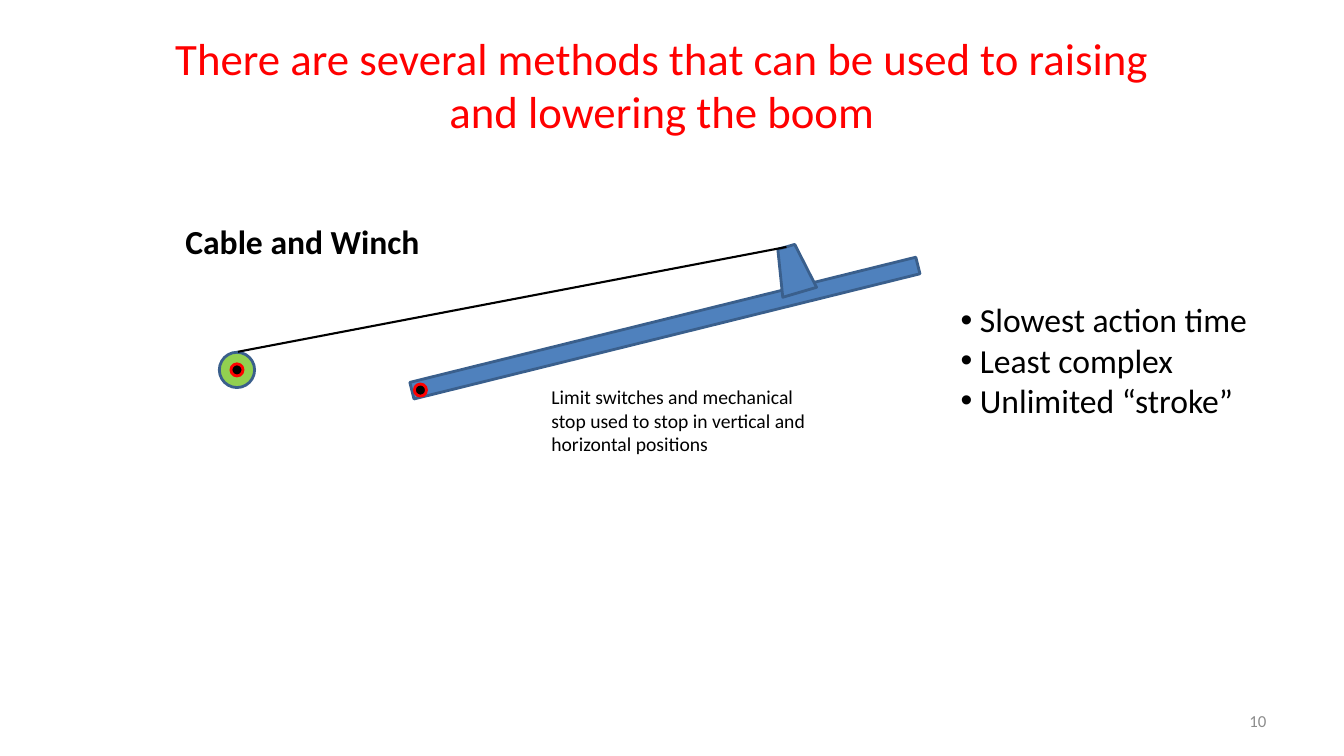
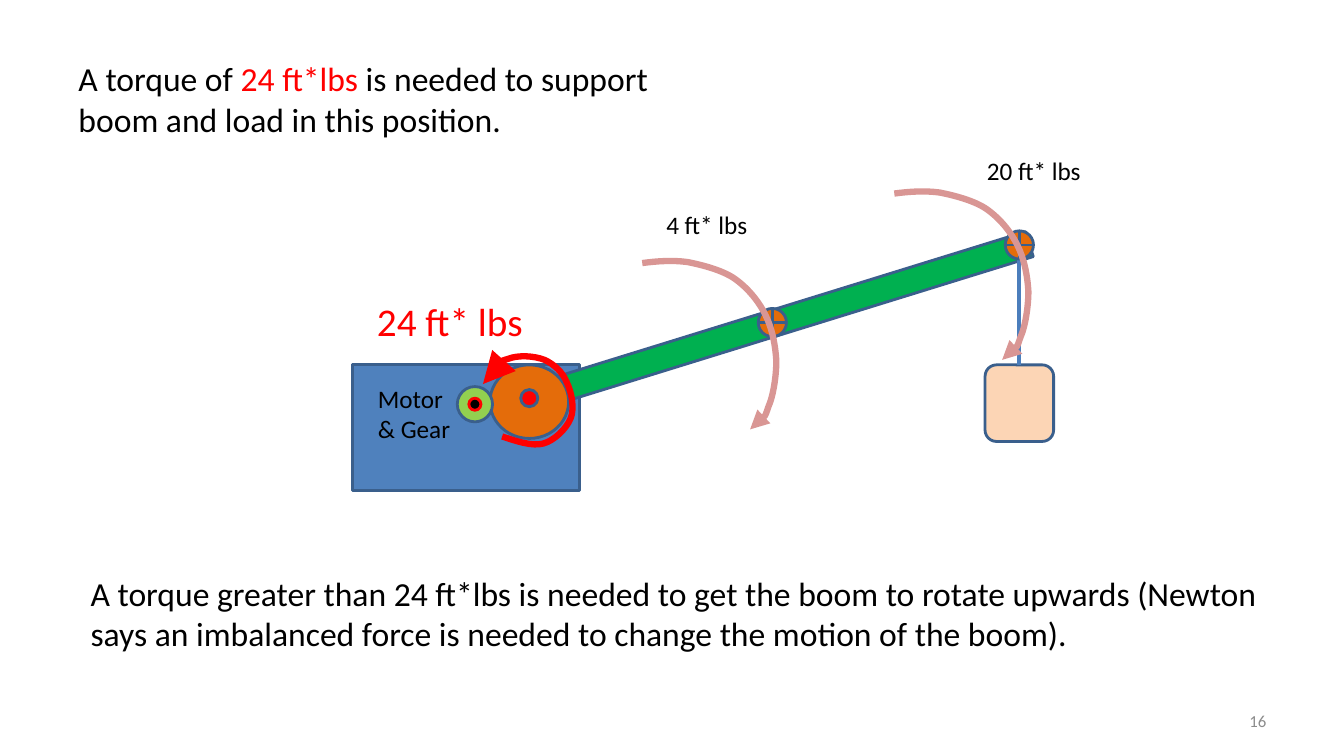
from lxml import etree
from pptx import Presentation
from pptx.dml.color import RGBColor
from pptx.enum.shapes import MSO_CONNECTOR, MSO_SHAPE
from pptx.enum.text import MSO_ANCHOR, MSO_AUTO_SIZE, PP_ALIGN
from pptx.oxml.ns import qn
from pptx.util import Inches, Pt

RECT, ROUND_RECT = MSO_SHAPE.RECTANGLE, MSO_SHAPE.ROUNDED_RECTANGLE
OVAL, TRAPEZOID = MSO_SHAPE.OVAL, MSO_SHAPE.TRAPEZOID
JOINT = MSO_SHAPE.FLOWCHART_OR
STRAIGHT = MSO_CONNECTOR.STRAIGHT
TOP, MIDDLE = MSO_ANCHOR.TOP, MSO_ANCHOR.MIDDLE
GROW, FIXED = MSO_AUTO_SIZE.SHAPE_TO_FIT_TEXT, MSO_AUTO_SIZE.NONE
LEFT, CENTER, RIGHT = PP_ALIGN.LEFT, PP_ALIGN.CENTER, PP_ALIGN.RIGHT

BLACK = RGBColor(0x00, 0x00, 0x00)
RED = RGBColor(0xFF, 0x00, 0x00)
GRAY = RGBColor(0x8C, 0x8C, 0x8C)
BLUE = RGBColor(0x4F, 0x81, 0xBD)
EDGE = RGBColor(0x3A, 0x5F, 0x8C)
ROPE = RGBColor(0x4B, 0x7E, 0xBC)
LIME = RGBColor(0x92, 0xD0, 0x50)
GREEN = RGBColor(0x00, 0xB0, 0x50)
ORANGE = RGBColor(0xE4, 0x6C, 0x0A)
PEACH = RGBColor(0xFC, 0xD5, 0xB5)
PINK = RGBColor(0xD9, 0x96, 0x94)

FONT = "Calibri"
WINCH, HUB, JOINT_SIZE = 0.35, 0.12, 0.28

# Content: text is a list of paragraphs, each a list of (words, colour)
TITLE = [[("There are several methods that can be used to raising "
           "and lowering the boom", RED)]]
METHOD = [[("Cable and Winch", BLACK)]]
FEATURES = [[(words, BLACK)] for words in
            ("Slowest action time", "Least complex", "Unlimited “stroke”")]
SWITCHES = [[("Limit switches and mechanical stop used to stop in vertical "
              "and horizontal positions", BLACK)]]
SUPPORT = [[("A torque of ", BLACK), ("24 ft*lbs ", RED),
            ("is needed to support boom and load in this position.", BLACK)]]
ROTATE = [[("A torque greater than 24 ft*lbs is needed to get the boom to "
            "rotate upwards (Newton says an imbalanced force is needed to "
            "change the motion of the boom).", BLACK)]]
MOTOR = [[("Motor & Gear", BLACK)]]
MOTOR_TORQUE = [[("24 ft* lbs", RED)]]

# Each downward torque: label, label box, start of its arrow, joint centre
LOAD_TORQUES = [
    ("4 ft* lbs", (6.51, 2.03, 1.02, 0.4), (6.37, 2.61), (7.66, 3.2)),
    ("20 ft* lbs", (9.69, 1.49, 1.26, 0.4), (8.87, 1.92), (10.11, 2.43)),
]

# Curves as Bezier points after the start, three for each piece
LOAD_CURVE = [
    (0.15, -0.02), (0.3, -0.03), (0.45, -0.01),
    (0.6, 0.02), (0.79, 0.07), (0.91, 0.15),
    (1.04, 0.24), (1.15, 0.37), (1.22, 0.51),
    (1.29, 0.65), (1.32, 0.81), (1.33, 0.97),
    (1.33, 1.12), (1.3, 1.32), (1.25, 1.43),
    (1.21, 1.55), (1.14, 1.6), (1.07, 1.65)]
MOTOR_CURVE = [
    (0.15, 0.05), (0.3, 0.1), (0.41, 0.07),
    (0.52, 0.04), (0.64, -0.08), (0.68, -0.18),
    (0.72, -0.28), (0.69, -0.44), (0.64, -0.54),
    (0.6, -0.64), (0.51, -0.72), (0.42, -0.76),
    (0.32, -0.8), (0.16, -0.81), (0.06, -0.77),
    (-0.04, -0.74), (-0.11, -0.63), (-0.19, -0.52)]


def inches(values):
    return [Inches(value) for value in values]


def add_text(page, at, paragraphs, size, align=LEFT, anchor=TOP,
             bold=False, bullets=False, wrap=True):
    frame = page.shapes.add_textbox(*inches(at)).text_frame
    frame.word_wrap = wrap
    frame.vertical_anchor = anchor
    frame.auto_size = GROW if anchor == TOP else FIXED
    for index, spans in enumerate(paragraphs):
        para = frame.add_paragraph() if index else frame.paragraphs[0]
        para.alignment = align
        para.font.name, para.font.size, para.font.bold = FONT, Pt(size), bold
        for words, color in spans:
            span = para.add_run()
            span.text = words
            span.font.color.rgb = color
        if bullets:
            props = para._p.get_or_add_pPr()
            props.set("marL", str(Inches(0.19)))
            props.set("indent", str(Inches(-0.19)))
            # Bullet marks come before the default run properties
            face = etree.Element(qn("a:buFont"), typeface="Arial")
            mark = etree.Element(qn("a:buChar"), char="•")
            props.insert(0, face)
            props.insert(1, mark)


def add_part(page, kind, at, fill, edge=EDGE, turn=0):
    part = page.shapes.add_shape(kind, *inches(at))
    part.shadow.inherit = False
    part.fill.solid()
    part.fill.fore_color.rgb = fill
    part.line.color.rgb = edge
    part.line.width = Pt(2)
    part.rotation = turn
    return part


def add_centered(page, kind, center, size, fill, edge=EDGE):
    x, y = center
    add_part(page, kind, (x - size / 2, y - size / 2, size, size), fill, edge)


def add_hub(page, center):
    add_centered(page, OVAL, center, HUB, BLACK, RED)


def add_winch(page, center):
    add_centered(page, OVAL, center, WINCH, LIME)
    add_hub(page, center)


def add_line(page, start, end, color, width):
    line = page.shapes.add_connector(STRAIGHT, *inches(start + end))
    line.line.color.rgb = color
    line.line.width = Pt(width)
    etree.SubElement(line._element.spPr, qn("a:effectLst"))
    return line


def bend_segments(shape):
    """Turn every three straight segments into one Bezier piece."""
    segments = list(shape._element.iter(qn("a:lnTo")))
    for first in range(0, len(segments), 3):
        piece = segments[first:first + 3]
        curve = etree.Element(qn("a:cubicBezTo"))
        piece[0].addprevious(curve)
        for segment in piece:
            curve.append(segment[0])
            segment.getparent().remove(segment)


def add_torque_arrow(page, start, curve, color, head="med"):
    x, y = start
    builder = page.shapes.build_freeform(Inches(x), Inches(y))
    builder.add_line_segments([inches((x + dx, y + dy)) for dx, dy in curve],
                              close=False)
    arrow = builder.convert_to_shape()
    bend_segments(arrow)
    arrow.shadow.inherit = False
    arrow.fill.background()
    arrow.line.color.rgb = color
    arrow.line.width = Pt(4.5)
    etree.SubElement(arrow.line._get_or_add_ln(), qn("a:tailEnd"),
                     type="triangle", w=head, len=head)


def add_page(deck, number):
    page = deck.slides.add_slide(deck.slide_layouts[6])
    add_text(page, (9.55, 6.95, 3.11, 0.4), [[(str(number), GRAY)]], 12,
             RIGHT, MIDDLE)
    return page


def build_winch_page(deck):
    page = add_page(deck, 10)

    # Boom, winch and cable
    add_part(page, RECT, (4.01, 3.17, 5.17, 0.17), BLUE, turn=346.1)
    add_winch(page, (2.35, 3.67))
    add_part(page, TRAPEZOID, (7.69, 2.44, 0.35, 0.47), BLUE, turn=343.6)
    add_line(page, (2.36, 3.49), (7.8, 2.45), BLACK, 1.5)
    add_hub(page, (4.17, 3.87))

    # Notes around the drawing
    add_text(page, (9.43, 2.92, 3.18, 1.31), FEATURES, 24, bullets=True)
    add_text(page, (5.37, 3.77, 2.76, 0.81), SWITCHES, 14)
    add_text(page, (1.74, 2.14, 2.55, 0.5), METHOD, 24, bold=True, wrap=False)
    add_text(page, (1.62, 0.25, 9.89, 1.17), TITLE, 32, CENTER, MIDDLE)


def build_torque_page(deck):
    page = add_page(deck, 16)
    add_text(page, (3.64, 2.9, 2.12, 0.58), MOTOR_TORQUE, 28)
    add_text(page, (0.68, 0.53, 6.58, 0.91), SUPPORT, 24)
    add_text(page, (0.8, 5.63, 11.93, 0.91), ROTATE, 24)

    # Motor box, boom and hanging load
    add_part(page, RECT, (3.5, 3.62, 2.25, 1.25), BLUE)
    add_part(page, RECT, (5, 3.08, 5.33, 0.26), GREEN, turn=342.8)
    load = add_part(page, ROUND_RECT, (9.77, 3.62, 0.68, 0.76), PEACH)
    rope = add_line(page, (10.11, 2.57), (10.11, 3.62), ROPE, 3)
    rope.end_connect(load, 0)

    # Downward torques
    for label, box, start, joint in LOAD_TORQUES:
        add_centered(page, JOINT, joint, JOINT_SIZE, ORANGE)
        add_text(page, box, [[(label, BLACK)]], 18)
        add_torque_arrow(page, start, LOAD_CURVE, PINK)

    # Gear, motor shaft and the torque they give
    add_part(page, OVAL, (4.86, 3.62, 0.78, 0.73), ORANGE)
    add_centered(page, OVAL, (5.25, 3.95), 0.17, RED)
    add_winch(page, (4.71, 4.01))
    add_text(page, (3.65, 3.75, 1.02, 0.71), MOTOR, 18)
    add_torque_arrow(page, (4.98, 4.33), MOTOR_CURVE, RED, "lg")


def main():
    deck = Presentation()
    deck.slide_width, deck.slide_height = inches((13.33, 7.5))
    build_winch_page(deck)
    build_torque_page(deck)
    deck.save("out.pptx")


if __name__ == "__main__":
    main()
